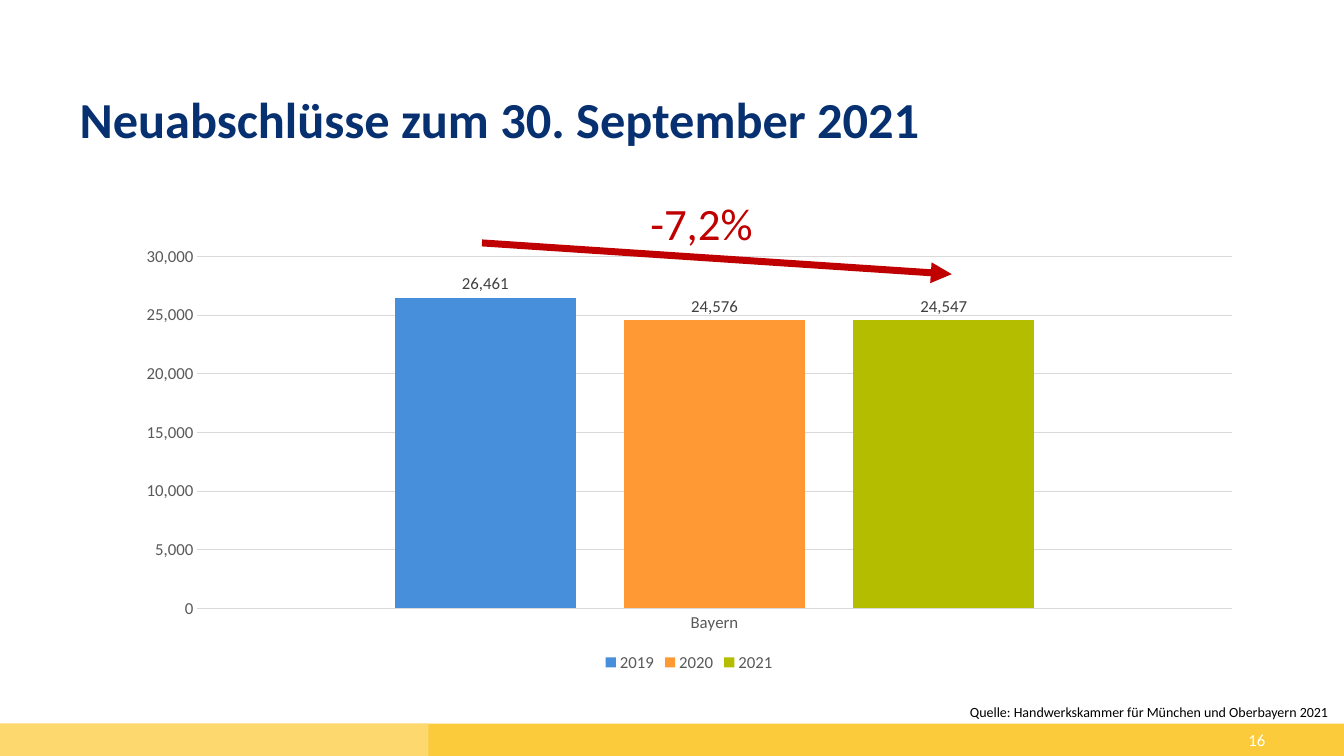
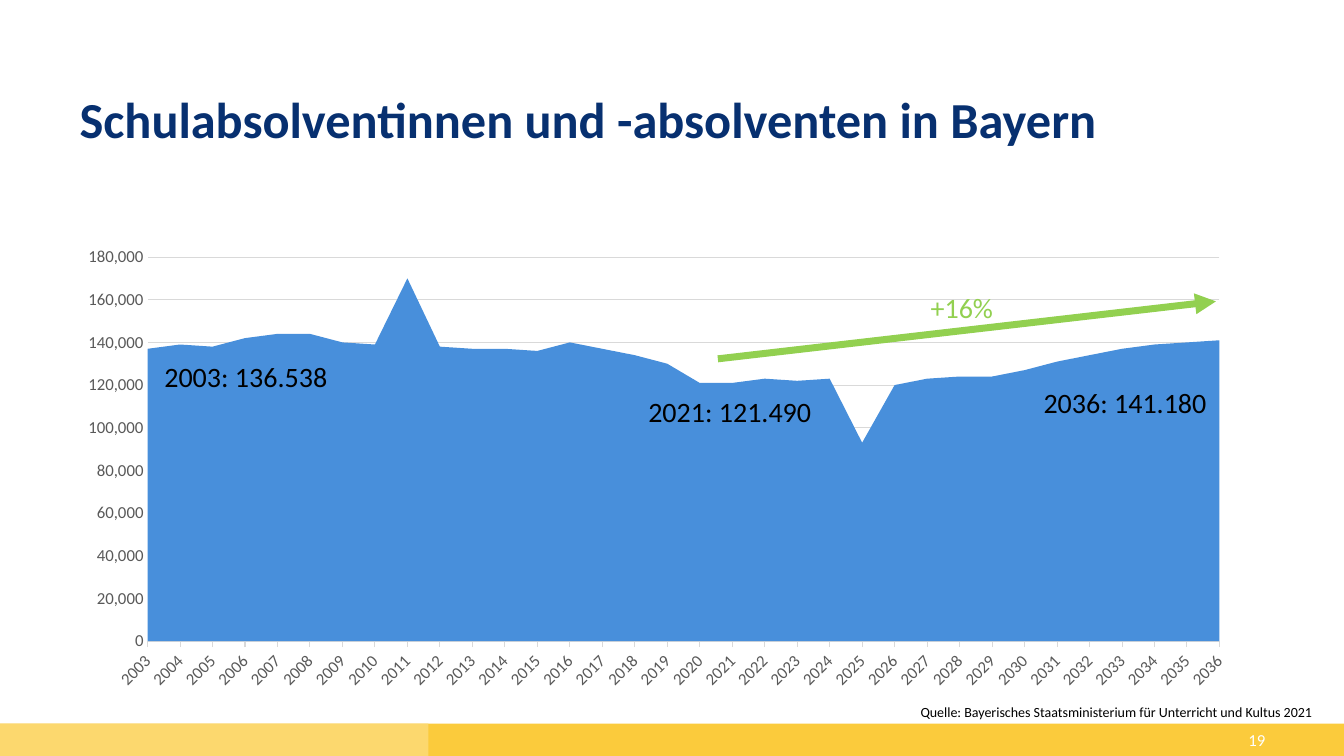
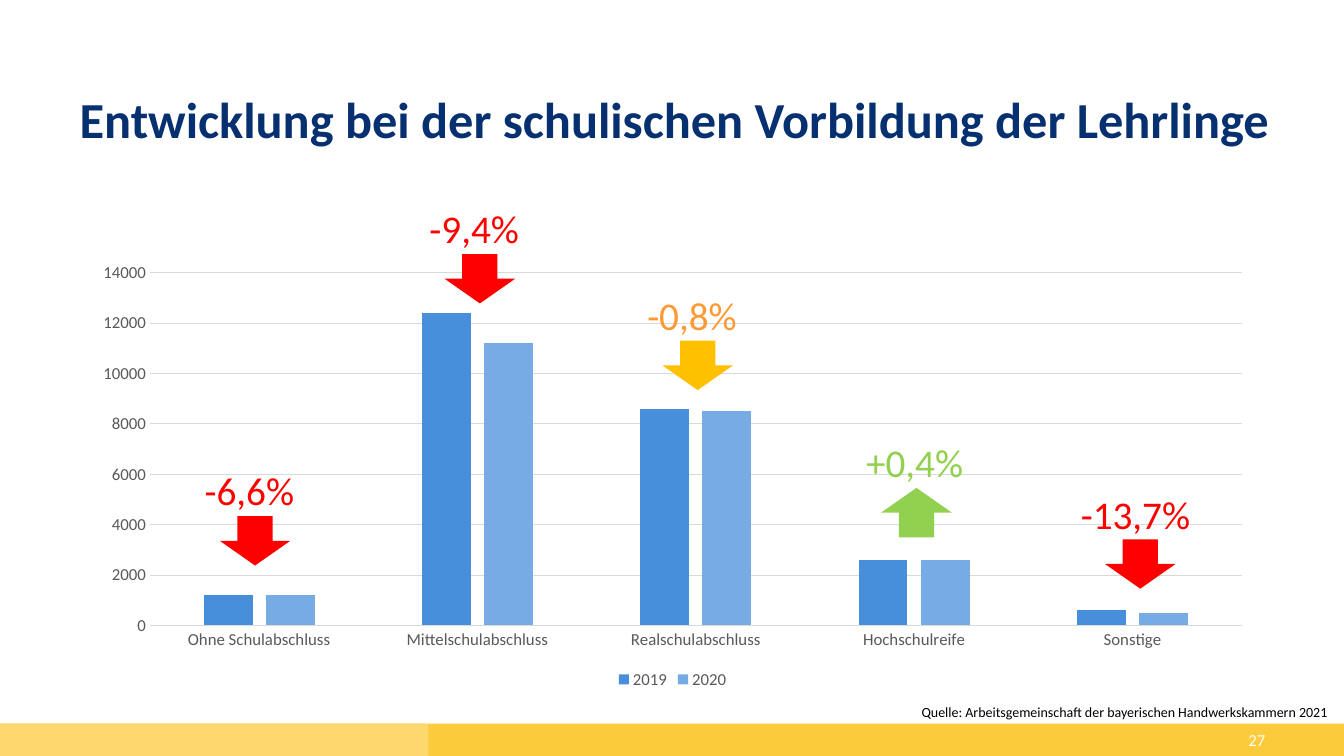
from dataclasses import dataclass

from lxml.etree import SubElement
from pptx import Presentation
from pptx.chart.data import CategoryChartData
from pptx.dml.color import RGBColor
from pptx.enum.chart import XL_CHART_TYPE, XL_LABEL_POSITION, XL_LEGEND_POSITION, XL_TICK_MARK
from pptx.enum.shapes import MSO_CONNECTOR, MSO_SHAPE
from pptx.enum.text import MSO_ANCHOR, PP_ALIGN
from pptx.oxml.ns import qn
from pptx.util import Inches, Pt


@dataclass(frozen=True)
class Theme:
    """Colours, font and type sizes of the presentation."""

    font: str = "Calibri"
    navy: str = "073070"
    gold: str = "FBCB3C"
    pale_gold: str = "FCD86E"
    white: str = "FFFFFF"
    black: str = "000000"
    axis_text: str = "595959"
    label_text: str = "404040"
    grid: str = "D9D9D9"
    blue: str = "488FDB"
    light_blue: str = "76ABE3"
    orange: str = "FF9933"
    lime: str = "B4BD00"
    amber: str = "FFC000"
    green: str = "92D050"
    red: str = "FF0000"
    dark_red: str = "C00000"
    title_size: int = 36
    trend_size: int = 32
    change_size: int = 28
    note_size: int = 20
    chart_size: int = 12
    source_size: int = 10


@dataclass(frozen=True)
class Box:
    """A region of a slide in inches."""

    left: float
    top: float
    width: float
    height: float

    def inches(self):
        """Return left, top, width and height as lengths."""
        return [Inches(v) for v in (self.left, self.top, self.width, self.height)]

    def inner(self, dx, dy, width, height):
        """Return a box placed relative to this one."""
        return Box(self.left + dx, self.top + dy, width, height)


THEME = Theme()
SLIDE = Box(0, 0, 13.33, 7.5)
FOOTER = Box(0, 7.18, 13.33, 0.32)


def rgb(colour):
    """Turn a hex string into a colour."""
    return RGBColor.from_string(colour)


def style_font(font, size, colour, bold=False):
    """Apply the theme font with a size and colour."""
    font.name, font.size, font.bold = THEME.font, Pt(size), bold
    font.color.rgb = rgb(colour)


def add_text(slide, box, text, *, size, colour=THEME.black, bold=False, wrap=False,
             align=PP_ALIGN.LEFT, anchor=MSO_ANCHOR.TOP, spacing=None):
    """Place one formatted paragraph in a box without insets."""
    frame = slide.shapes.add_textbox(*box.inches()).text_frame
    frame.margin_left = frame.margin_right = frame.margin_top = frame.margin_bottom = 0
    frame.word_wrap, frame.vertical_anchor = wrap, anchor
    paragraph = frame.paragraphs[0]
    paragraph.alignment, paragraph.line_spacing = align, spacing
    run = paragraph.add_run()
    run.text = text
    style_font(run.font, size, colour, bold)


def add_filled(slide, preset, box, colour):
    """Draw a flat preset shape without outline."""
    shape = slide.shapes.add_shape(preset, *box.inches())
    shape.shadow.inherit = False
    shape.fill.solid()
    shape.fill.fore_color.rgb = rgb(colour)
    shape.line.fill.background()


def add_arrow(slide, box, colour, rising=False):
    """Draw a thick arrow along a diagonal of the box."""
    start, end = box.top, box.top + box.height
    if rising:
        start, end = end, start
    arrow = slide.shapes.add_connector(
        MSO_CONNECTOR.STRAIGHT, Inches(box.left), Inches(start),
        Inches(box.left + box.width), Inches(end))
    arrow.line.color.rgb = rgb(colour)
    arrow.line.width = Pt(5)
    SubElement(arrow.line._get_or_add_ln(), qn("a:tailEnd"), type="triangle")
    SubElement(arrow._element.spPr, qn("a:effectLst"))


def add_footer(slide, box, number):
    """Draw the two-tone band with the page number."""
    add_filled(slide, MSO_SHAPE.RECTANGLE, box, THEME.gold)
    add_filled(slide, MSO_SHAPE.RECTANGLE, box.inner(0, 0, 4.25, box.height), THEME.pale_gold)
    add_text(slide, box.inner(9.55, 0, 3, box.height), number, size=THEME.chart_size,
             colour=THEME.white, wrap=True, align=PP_ALIGN.RIGHT, anchor=MSO_ANCHOR.MIDDLE)


def add_page(deck, title, number, source, source_left, source_width, title_width=11.76):
    """Start a slide with title, footer band and source line."""
    slide = deck.slides.add_slide(deck.slide_layouts[6])
    add_footer(slide, FOOTER, number)
    add_text(slide, SLIDE.inner(0.79, 0.94, title_width, 1.05), title, size=THEME.title_size,
             colour=THEME.navy, bold=True, wrap=True, spacing=0.9)
    add_text(slide, SLIDE.inner(source_left, 6.98, source_width, 0.17), f"Quelle: {source}",
             size=THEME.source_size)
    return slide


def style_axes(chart, maximum, step, number_format):
    """Format both axes with grey labels and thin grid lines."""
    categories, values = chart.category_axis, chart.value_axis
    values.minimum_scale, values.maximum_scale, values.major_unit = 0, maximum, step
    values.has_major_gridlines = True
    values.tick_labels.number_format = number_format
    values.tick_labels.number_format_is_linked = False
    values.format.line.fill.background()
    categories.has_major_gridlines = False
    for line in (categories.format.line, values.major_gridlines.format.line):
        line.color.rgb = rgb(THEME.grid)
        line.width = Pt(0.75)
    for axis in (categories, values):
        axis.major_tick_mark = axis.minor_tick_mark = XL_TICK_MARK.NONE
        style_font(axis.tick_labels.font, THEME.chart_size, THEME.axis_text)


def add_chart(slide, kind, box, categories, series, *, maximum, step, number_format="#,##0"):
    """Insert a chart; series holds name, values and colour."""
    data = CategoryChartData()
    data.categories = categories
    for name, values, _ in series:
        data.add_series(name, values)
    chart = slide.shapes.add_chart(kind, *box.inches(), data).chart
    chart.has_title = chart.has_legend = False
    style_font(chart.font, THEME.source_size, THEME.black)
    style_axes(chart, maximum, step, number_format)
    for plotted, (_, _, colour) in zip(chart.plots[0].series, series):
        plotted.format.fill.solid()
        plotted.format.fill.fore_color.rgb = rgb(colour)
    return chart


def add_columns(slide, box, categories, series, **scale):
    """Insert clustered columns with a legend below."""
    chart = add_chart(slide, XL_CHART_TYPE.COLUMN_CLUSTERED, box, categories, series, **scale)
    plot = chart.plots[0]
    plot.vary_by_categories = False
    plot.gap_width, plot.overlap = 219, -27
    chart.has_legend = True
    chart.legend.position = XL_LEGEND_POSITION.BOTTOM
    chart.legend.include_in_layout = False
    style_font(chart.legend.font, THEME.chart_size, THEME.axis_text)
    return chart


def add_area(slide, box, categories, series, **scale):
    """Insert a stacked area that fills the axis, with slanted labels."""
    chart = add_chart(slide, XL_CHART_TYPE.AREA_STACKED, box, categories, series, **scale)
    chart.plots[0].vary_by_categories = False
    chart.category_axis.major_tick_mark = XL_TICK_MARK.OUTSIDE
    chart.category_axis._element.find(qn("c:txPr")).find(qn("a:bodyPr")).set("rot", "-2700000")
    chart.value_axis._element.find(qn("c:crossBetween")).set("val", "midCat")


def add_change(slide, box, text, colour, arrow_colour, shift=0.15, rising=False):
    """Place a percentage with a block arrow below it."""
    preset = MSO_SHAPE.UP_ARROW if rising else MSO_SHAPE.DOWN_ARROW
    add_filled(slide, preset, box.inner(shift, 0.49, 0.7, 0.49), arrow_colour)
    add_text(slide, box, text, size=THEME.change_size, colour=colour)


def contracts_slide(deck):
    """Build the slide on new contracts."""
    slide = add_page(deck, "Neuabschlüsse zum 30. September 2021", "16",
                     "Handwerkskammer für München und Oberbayern 2021", 9.62, 3.61)
    series = [("2019", [26461], THEME.blue), ("2020", [24576], THEME.orange),
              ("2021", [24547], THEME.lime)]
    chart = add_columns(slide, Box(1.23, 2.36, 11.21, 4.35), ["Bayern"], series,
                        maximum=30000, step=5000)
    for plotted in chart.plots[0].series:
        labels = plotted.data_labels
        labels.show_value = True
        labels.number_format, labels.number_format_is_linked = "#,##0", False
        labels.position = XL_LABEL_POSITION.OUTSIDE_END
        style_font(labels.font, THEME.chart_size, THEME.label_text)
    trend = Box(4.78, 2.41, 4.66, 0.31)
    add_arrow(slide, trend, THEME.dark_red)
    add_text(slide, trend.inner(1.67, -0.47, 2.99, 0.47), "-7,2%", size=THEME.trend_size,
             colour=THEME.dark_red)


def graduates_slide(deck):
    """Build the slide on school leavers."""
    slide = add_page(deck, "Schulabsolventinnen und -absolventen in Bayern", "19",
                     "Bayerisches Staatsministerium für Unterricht und Kultus 2021", 9.13, 3.95)
    thousands = [137, 139, 138, 142, 144, 144, 140, 139, 170, 138, 137, 137,
                 136, 140, 137, 134, 130, 121, 121, 123, 122, 123, 93, 120,
                 123, 124, 124, 127, 131, 134, 137, 139, 140, 141]
    years = [str(year) for year in range(2003, 2037)]
    area = Box(0.64, 2.36, 11.76, 4.57)
    add_area(slide, area, years,
             [("Series 1", [value * 1000 for value in thousands], THEME.blue)],
             maximum=180000, step=20000)
    trend = Box(7.12, 2.99, 4.94, 0.57)
    add_arrow(slide, trend, THEME.green, rising=True)
    add_text(slide, trend.inner(2.11, -0.11, 0.72, 0.44), "+16%", size=THEME.note_size,
             colour=THEME.green)
    for dx, dy, note in [(0.99, 1.21, "2003: 136.538"), (5.79, 1.55, "2021: 121.490"),
                         (9.71, 1.46, "2036: 141.180")]:
        add_text(slide, area.inner(dx, dy, 1.62, 0.44), note, size=THEME.note_size)


def schooling_slide(deck):
    """Build the slide on the schooling of apprentices."""
    slide = add_page(deck, "Entwicklung bei der schulischen Vorbildung der Lehrlinge", "27",
                     "Arbeitsgemeinschaft der bayerischen Handwerkskammern 2021", 9.14, 4.09,
                     title_width=12.04)
    degrees = ["Ohne Schulabschluss", "Mittelschulabschluss", "Realschulabschluss",
               "Hochschulreife", "Sonstige"]
    series = [("2019", [1200, 12400, 8600, 2600, 600], THEME.blue),
              ("2020", [1200, 11200, 8500, 2600, 500], THEME.light_blue)]
    columns = Box(0.79, 2.52, 11.76, 4.36)
    add_columns(slide, columns, degrees, series, maximum=14000, step=2000,
                number_format="General")
    changes = [
        (1.24, 2.11, "-6,6%", THEME.red, THEME.red, {}),
        (3.47, -0.49, "-9,4%", THEME.red, THEME.red, {}),
        (5.63, 0.37, "-0,8%", THEME.orange, THEME.amber, {}),
        (7.8, 1.83, "+0,4%", THEME.green, THEME.green, {"rising": True}),
        (9.93, 2.34, "-13,7%", THEME.red, THEME.red, {"shift": 0.24}),
    ]
    for dx, dy, text, colour, arrow_colour, options in changes:
        add_change(slide, columns.inner(dx, dy, 1.2, 0.48), text, colour, arrow_colour,
                   **options)


def main():
    """Build and save the presentation."""
    deck = Presentation()
    deck.slide_width, deck.slide_height = Inches(SLIDE.width), Inches(SLIDE.height)
    for build in (contracts_slide, graduates_slide, schooling_slide):
        build(deck)
    deck.save("out.pptx")


if __name__ == "__main__":
    main()
